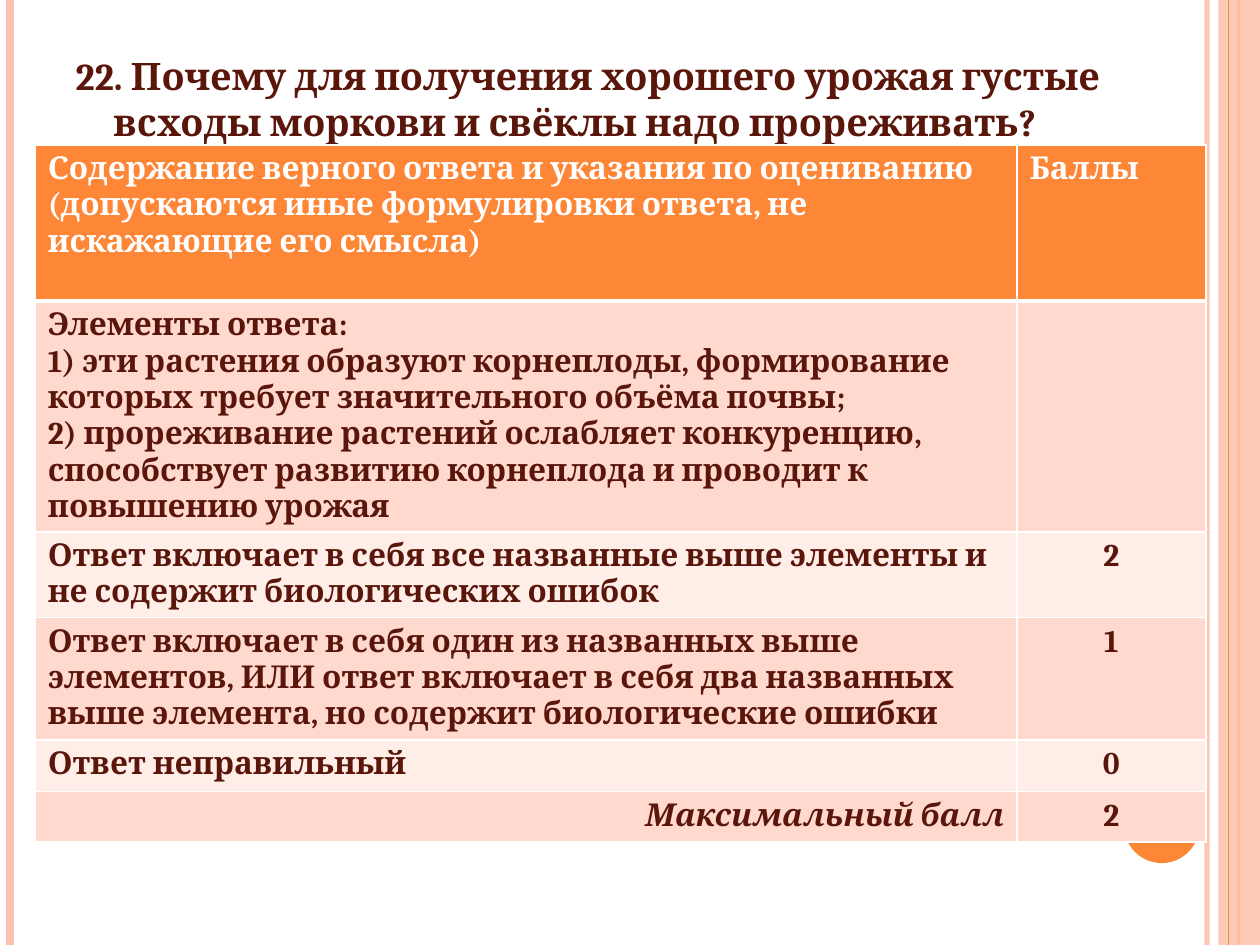
from dataclasses import dataclass

from lxml.etree import SubElement
from pptx import Presentation
from pptx.dml.color import RGBColor
from pptx.enum.shapes import MSO_CONNECTOR, MSO_SHAPE
from pptx.enum.text import MSO_ANCHOR, MSO_AUTO_SIZE, PP_ALIGN as Align
from pptx.oxml.ns import qn
from pptx.util import Inches, Pt


@dataclass(frozen=True)
class Theme:
    font: str = "Cambria"
    title_size: float = 21.6
    table_size: float = 18
    ink: str = "5A160B"
    white: str = "FFFFFF"
    accent: str = "FE8637"
    stripe: str = "FEC3AE"
    band_dark: str = "FFD9CE"
    band_light: str = "FFEDE8"


THEME = Theme()

TITLE = ("22. Почему для получения хорошего урожая густые "
         "всходы моркови и свёклы надо прореживать?")

# Row height in inches, paragraphs of the answer cell, points
ROWS = [
    (1.24, ["Содержание верного ответа и указания по оцениванию",
            "(допускаются иные формулировки ответа, не искажающие его смысла)"], "Баллы"),
    (1.83, ["Элементы ответа:",
            "1) эти растения образуют корнеплоды, формирование которых требует "
            "значительного объёма почвы;",
            "2) прореживание растений ослабляет конкуренцию, способствует развитию "
            "корнеплода и проводит к повышению урожая"], ""),
    (0.68, ["Ответ включает в себя все названные выше элементы и не содержит "
            "биологических ошибок"], "2"),
    (0.97, ["Ответ включает в себя один из названных выше элементов, ИЛИ ответ "
            "включает в себя два названных выше элемента, но содержит "
            "биологические ошибки"], "1"),
    (0.41, ["Ответ неправильный"], "0"),
    (0.4, ["Максимальный балл"], "2"),
]


def write(para, text, size, color=THEME.ink, align=Align.LEFT, italic=False):
    para.alignment = align
    span = para.add_run()
    span.text = text
    font = span.font
    font.name, font.size, font.bold, font.italic = THEME.font, Pt(size), True, italic
    font.color.rgb = RGBColor.from_string(color)


def set_opacity(color_parent, percent):
    color = next(color_parent.iter(qn("a:srgbClr")))
    SubElement(color, qn("a:alpha")).set("val", str(percent * 1000))


def add_stripe(page, x, top, height, color, width, opacity=100):
    """Vertical rule at x."""
    rule = page.shapes.add_connector(MSO_CONNECTOR.STRAIGHT, Inches(x), Inches(top),
                                     Inches(x), Inches(top + height))
    rule.line.color.rgb = RGBColor.from_string(color)
    rule.line.width = Pt(width)
    properties = rule._element.spPr
    if opacity < 100:
        set_opacity(properties, opacity)
    SubElement(properties, qn("a:effectLst"))


def add_plain_shape(page, kind, box, color, opacity=100):
    shape = page.shapes.add_shape(kind, *(Inches(length) for length in box))
    shape.shadow.inherit = False
    shape.fill.solid()
    shape.fill.fore_color.rgb = RGBColor.from_string(color)
    shape.line.fill.background()
    if opacity < 100:
        set_opacity(shape._element.spPr, opacity)


def add_frame(page, box):
    """Stripes along both sides and the disc at the lower right."""
    left, top, width, height = box
    right = left + width
    add_stripe(page, right - 0.42, top, height, THEME.stripe, 3, opacity=93)
    add_stripe(page, left + 0.08, top, height, THEME.stripe, 4.5)
    add_stripe(page, right - 0.17, top, height, THEME.accent, 1.5)
    add_plain_shape(page, MSO_SHAPE.RECTANGLE, (right - 0.33, top, 0.33, height),
                    THEME.stripe, opacity=87)
    add_stripe(page, right - 0.25, top, height, THEME.accent, 0.75)
    add_plain_shape(page, MSO_SHAPE.OVAL,
                    (right - 1.08, top + height - 1.25, 0.6, 0.6), THEME.accent)


def fill_title(page, box):
    title = page.shapes.title
    title.left, title.top, title.width, title.height = (Inches(length) for length in box)
    frame = title.text_frame
    frame.word_wrap = True
    frame.auto_size = MSO_AUTO_SIZE.NONE
    frame.vertical_anchor = MSO_ANCHOR.BOTTOM
    frame.margin_bottom = Inches(0.41)
    para = frame.paragraphs[0]
    write(para, TITLE, THEME.title_size)
    para.space_before = Pt(6)
    indent = Inches(0.3)
    properties = para._p.get_or_add_pPr()
    properties.set("marL", str(indent))
    properties.set("indent", str(-indent))


def set_borders(cell, **widths):
    """White borders; widths in points by side L, R, T or B, else 1."""
    properties = cell._tc.get_or_add_tcPr()
    for side in "LRTB":
        line = SubElement(properties, qn(f"a:ln{side}"), w=str(Pt(widths.get(side, 1))))
        fill = SubElement(line, qn("a:solidFill"))
        SubElement(fill, qn("a:srgbClr"), val=THEME.white)


def fill_cell(cell, lines, fill, borders, **text_format):
    set_borders(cell, **borders)
    cell.fill.solid()
    cell.fill.fore_color.rgb = RGBColor.from_string(fill)
    frame = cell.text_frame
    for index, line in enumerate(lines):
        para = frame.add_paragraph() if index else frame.paragraphs[0]
        write(para, line, THEME.table_size, **text_format)


def add_score_table(page, box):
    left, top, width, height = (Inches(length) for length in box)
    table = page.shapes.add_table(len(ROWS), 2, left, top, width, height).table
    score_width = Inches(1.5)
    table.columns[0].width = width - score_width
    table.columns[1].width = score_width
    last = len(ROWS) - 1
    for index, (row_height, answer, score) in enumerate(ROWS):
        table.rows[index].height = Inches(row_height)
        header, total = index == 0, index == last
        color = THEME.white if header else THEME.ink
        band = THEME.band_dark if index % 2 else THEME.band_light
        fill = THEME.accent if header else band
        borders = {0: {"B": 3}, 1: {"T": 3}}.get(index, {})
        fill_cell(table.cell(index, 0), answer, fill, borders, color=color,
                  align=Align.RIGHT if total else Align.LEFT, italic=total)
        fill_cell(table.cell(index, 1), [score] if score else [], fill, borders,
                  color=color, align=Align.LEFT if header else Align.CENTER)


def main():
    deck = Presentation()
    deck.slide_width, deck.slide_height = Inches(10), Inches(7.5)
    page = deck.slides.add_slide(deck.slide_layouts[5])
    add_frame(page, (0, 0, 10, 7.5))
    fill_title(page, (0.5, 0.3, 8.99, 1.25))
    add_score_table(page, (0.28, 1.15, 9.29, sum(row[0] for row in ROWS)))
    deck.save("out.pptx")


if __name__ == "__main__":
    main()
